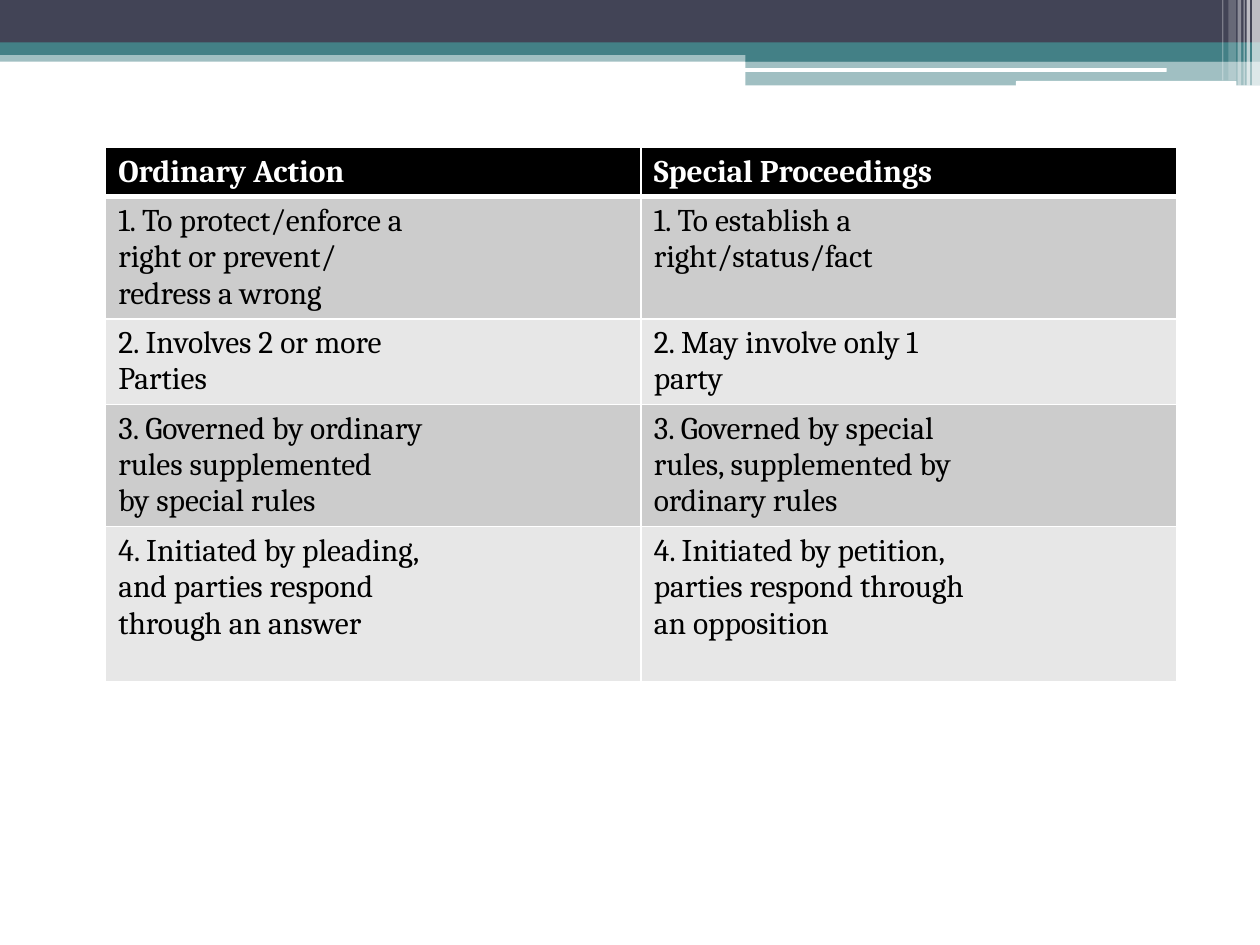
from lxml import etree
from pptx import Presentation
from pptx.dml.color import RGBColor
from pptx.enum.shapes import MSO_SHAPE
from pptx.enum.text import PP_ALIGN
from pptx.oxml.ns import qn
from pptx.util import Pt

RECT, ROUND = MSO_SHAPE.RECTANGLE, MSO_SHAPE.ROUNDED_RECTANGLE
LEFT, JUSTIFY = PP_ALIGN.LEFT, PP_ALIGN.JUSTIFY
WHITE = RGBColor(0xFF, 0xFF, 0xFF)
BLACK = RGBColor(0x00, 0x00, 0x00)
SLATE = RGBColor(0x42, 0x44, 0x56)
TEAL = RGBColor(0x43, 0x80, 0x86)
DARK_BAND = RGBColor(0xCC, 0xCC, 0xCC)
LIGHT_BAND = RGBColor(0xE7, 0xE7, 0xE7)


def add_bar(kind, left, top, width, height, color, opacity=100):
    sp = s.shapes.add_shape(kind, Pt(left), Pt(top), Pt(width), Pt(height))
    sp.shadow.inherit = False
    sp.line.fill.background()
    sp.fill.solid()
    sp.fill.fore_color.rgb = color
    if opacity < 100:
        clr = sp.fill._xPr.find(".//" + qn("a:srgbClr"))
        etree.SubElement(clr, qn("a:alpha"), val=str(opacity * 1000))


def set_border(cell, side, width):
    ln = etree.SubElement(cell._tc.get_or_add_tcPr(), qn("a:ln" + side), w=str(Pt(width)))
    fill = etree.SubElement(ln, qn("a:solidFill"))
    etree.SubElement(fill, qn("a:srgbClr"), val=str(WHITE))


prs = Presentation()
prs.slide_width, prs.slide_height = Pt(720), Pt(540)
s = prs.slides.add_slide(prs.slide_layouts[6])

# Header bands
add_bar(RECT, 0, 28.8, 720, 6.5, TEAL, 50)
add_bar(RECT, 0, 0, 720, 24.5, SLATE)
add_bar(RECT, 0, 24.2, 720, 7.2, TEAL)
add_bar(RECT, 426, 28, 294, 7.2, TEAL)
add_bar(RECT, 426, 34.6, 294, 14.2, TEAL, 50)
add_bar(ROUND, 425.5, 38.9, 241.2, 2.2, WHITE)
add_bar(ROUND, 580.5, 46.3, 126, 2.9, WHITE)

# Translucent stripes at the right edge: left, width, height, opacity
STRIPES = [
    (715.5, 4.5, 49, 65), (712.3, 2, 49, 65), (710.6, 0.7, 49, 60),
    (707.2, 2, 49, 40), (702, 4.3, 46, 20), (698.4, 0.7, 46, 30),
]
for left, width, height, opacity in STRIPES:
    add_bar(RECT, left, 0, width, height, WHITE, opacity)

# Comparison table
ROWS = [
    ("Ordinary Action", "Special Proceedings"),
    ("1. To protect/enforce a\nright or prevent/\nredress a wrong",
     "1. To establish a\nright/status/fact"),
    ("2. Involves 2 or more\nParties", "2. May involve only 1\nparty"),
    ("3. Governed by ordinary\nrules supplemented\nby special rules",
     "3. Governed by special\nrules, supplemented by\nordinary rules"),
    ("4. Initiated by pleading,\nand parties respond\nthrough an answer",
     "4. Initiated by petition,\nparties respond through\nan opposition"),
]
HEIGHTS = [28, 69.8, 49, 69.8, 88.8]
table = s.shapes.add_table(len(ROWS), 2, Pt(60.4), Pt(84.4), Pt(612), Pt(sum(HEIGHTS))).table
for i, (texts, height) in enumerate(zip(ROWS, HEIGHTS)):
    table.rows[i].height = Pt(height)
    header = i == 0
    band = BLACK if header else DARK_BAND if i % 2 else LIGHT_BAND
    for j, text in enumerate(texts):
        cell = table.cell(i, j)
        for side in "LRTB":
            thick = (header and side == "B") or (i == 1 and side == "T")
            set_border(cell, side, 3 if thick else 1)
        cell.fill.solid()
        cell.fill.fore_color.rgb = band
        cell.text = text
        for p in cell.text_frame.paragraphs:
            p.alignment = JUSTIFY if j == 0 and not header else LEFT
            p.font.name = "Cambria"
            p.font.size = Pt(18)
            p.font.bold = header
            p.font.color.rgb = WHITE if header else BLACK

prs.save("out.pptx")
